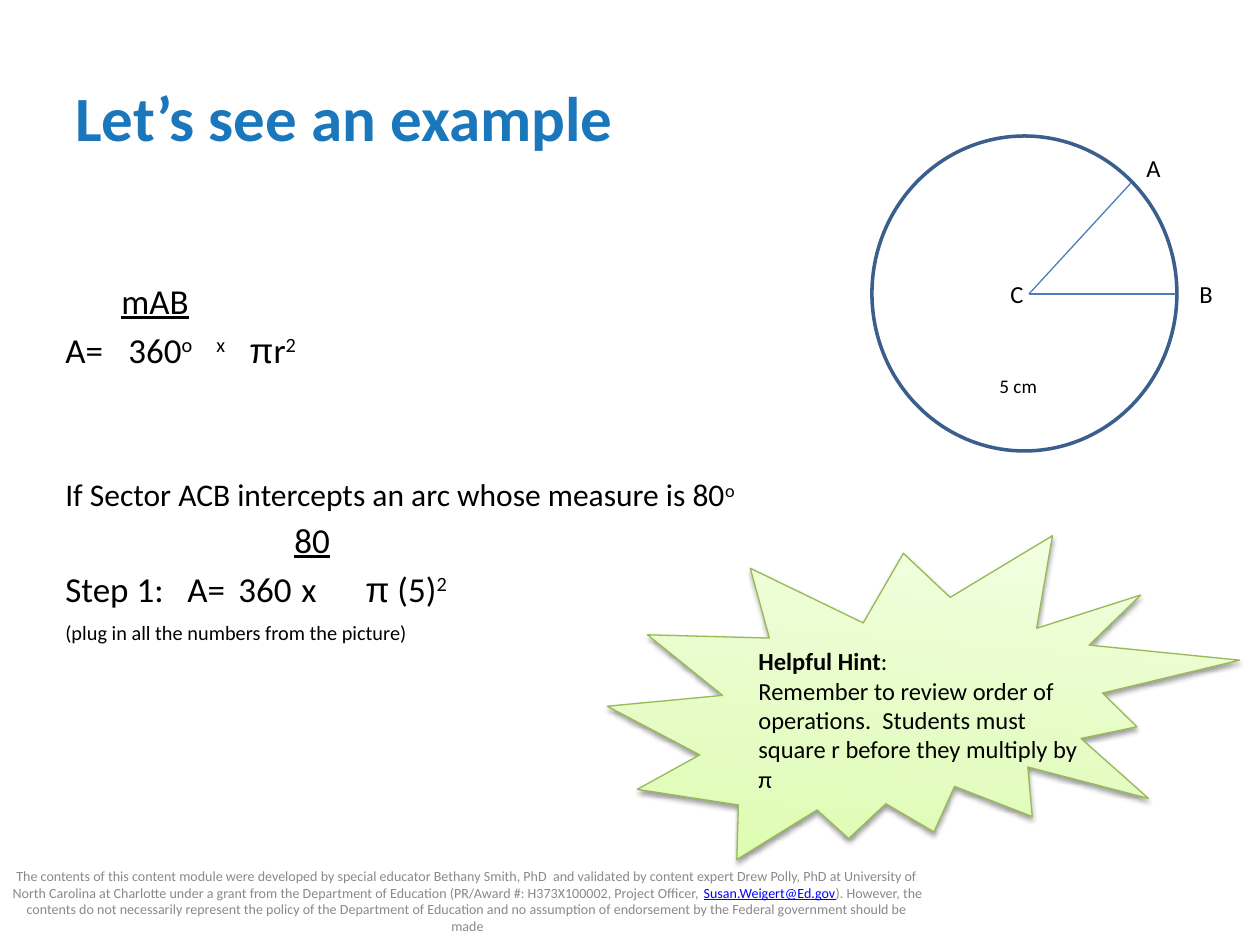
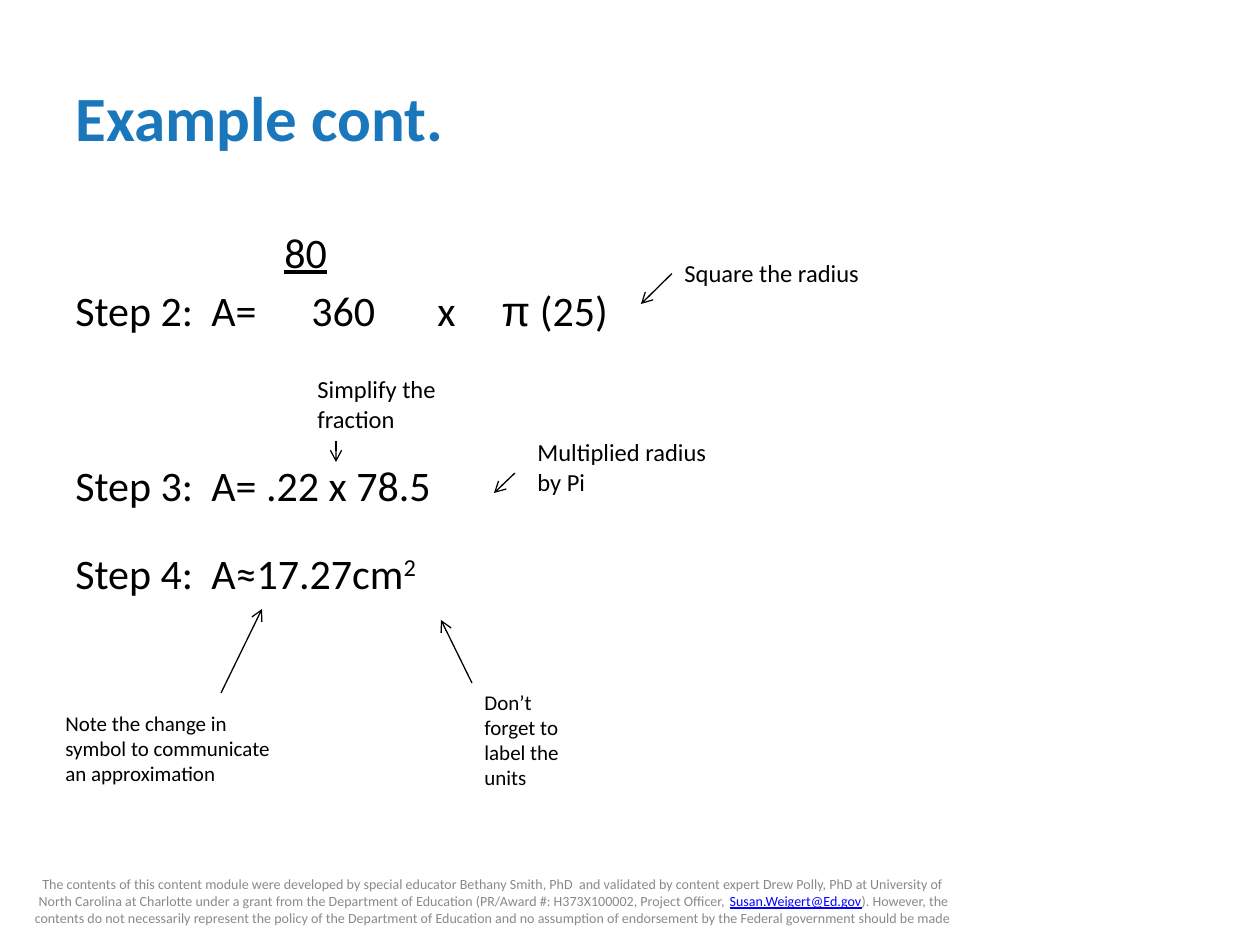
from dataclasses import dataclass

from lxml.etree import SubElement
from pptx import Presentation
from pptx.dml.color import RGBColor
from pptx.enum.shapes import MSO_CONNECTOR, MSO_SHAPE
from pptx.enum.text import MSO_ANCHOR, PP_ALIGN
from pptx.oxml import parse_xml
from pptx.oxml.ns import nsdecls, qn
from pptx.util import Pt

PX = 914400 / 126


@dataclass(frozen=True)
class Theme:
    font: str = "Calibri"
    symbol_font: str = "Arial"
    title: str = "1B77BC"
    text: str = "000000"
    muted: str = "898989"
    link: str = "0000FF"
    paper: str = "FFFFFF"
    circle: str = "3A5F8C"
    radius: str = "4B7EBC"
    seal_line: str = "98B955"
    seal_stops: tuple = ((0, "DAFDA7"), (35, "E4FCC2"), (100, "F5FFE7"))
    title_size: float = 36
    step_size: float = 24
    formula_size: float = 20
    given_size: float = 18
    label_size: float = 14
    note_size: float = 12
    length_size: float = 11
    footer_size: float = 8
    thin: float = 0.75
    thick: float = 2


T = Theme()

FOOTER = [[
    ("The contents of this content module were developed by special educator "
     "Bethany Smith, PhD  and validated by content expert Drew Polly, PhD at "
     "University of North Carolina at Charlotte under a grant from the Department "
     "of Education (PR/Award #: H373X100002, Project Officer, ", ""),
    ("Susan.Weigert@Ed.gov", "link underline"),
    ("). However, the contents do not necessarily represent the policy of the "
     "Department of Education and no assumption of endorsement by the Federal "
     "government should be made", ""),
]]


def px(n):
    return round(n * PX)


def rgb(color):
    return RGBColor.from_string(color)


# Text helpers
def add_runs(p, runs, size, color):
    for text, style in runs:
        r = p.add_run()
        r.text = text
        f = r.font
        f.size = Pt(size)
        f.name = T.symbol_font if "symbol" in style else T.font
        f.color.rgb = rgb(T.link if "link" in style else color)
        if "bold" in style:
            f.bold = True
        if "underline" in style:
            f.underline = True
        if "super" in style:
            r._r.get_or_add_rPr().set("baseline", "30000")


def add_text(slide, box, paragraphs, size, color=T.text,
             anchor=MSO_ANCHOR.TOP, align=PP_ALIGN.LEFT):
    """Add a text box; each paragraph is a list of (text, style) runs."""
    sp = slide.shapes.add_textbox(*map(px, box))
    tf = sp.text_frame
    tf.word_wrap = True
    tf.vertical_anchor = anchor
    for i, runs in enumerate(paragraphs):
        p = tf.add_paragraph() if i else tf.paragraphs[0]
        p.alignment = align
        add_runs(p, runs, size, color)
    return sp


def add_working(slide, box, lines):
    """Add lines of working as (size, space before, tab stops, runs)."""
    tf = add_text(slide, box, [], T.formula_size).text_frame
    for i, (size, before, stops, runs) in enumerate(lines):
        p = tf.add_paragraph() if i else tf.paragraphs[0]
        if stops:
            tabs = SubElement(p._p.get_or_add_pPr(), qn("a:tabLst"))
            for stop in stops:
                SubElement(tabs, qn("a:tab"), pos=str(px(stop)), algn="l")
        if before:
            p.space_before = Pt(before)
        add_runs(p, runs, size, T.text)


# Line helper
def add_line(slide, start, end, color, arrow=False):
    cx = slide.shapes.add_connector(MSO_CONNECTOR.STRAIGHT, *map(px, start + end))
    cx.line.color.rgb = rgb(color)
    cx.line.width = Pt(T.thin)
    if arrow:
        SubElement(cx.line._get_or_add_ln(), qn("a:tailEnd"), type="arrow")
    SubElement(cx._element.spPr, qn("a:effectLst"))
    return cx


# Title and footer shared by both slides
def add_frame(prs, title, footer_box):
    slide = prs.slides.add_slide(prs.slide_layouts[6])
    add_text(slide, (63, 38, 1134, 157), [[(title, "bold")]], T.title_size,
             T.title, MSO_ANCHOR.MIDDLE)
    add_text(slide, footer_box, FOOTER, T.footer_size, T.muted,
             MSO_ANCHOR.MIDDLE, PP_ALIGN.CENTER)
    return slide


# Circle with sector ACB
def add_circle(slide, box):
    x, y, w, h = box
    sp = slide.shapes.add_shape(MSO_SHAPE.OVAL, *map(px, box))
    sp.shadow.inherit = False
    sp.fill.solid()
    sp.fill.fore_color.rgb = rgb(T.paper)
    sp.line.color.rgb = rgb(T.circle)
    sp.line.width = Pt(T.thick)
    center = (x + 157, y + h // 2 + 1)
    for end in ((x + w - 1, center[1]), (x + 259, y + 47)):
        add_line(slide, center, end, T.radius)
    for name, dx, dy in (("A", 262, 11), ("B", 315, 137), ("C", 126, 137)):
        add_text(slide, (x + dx, y + dy, 32, 43), [[(name, "")]], T.label_size)
    add_text(slide, (x + 115, y + 232, 73, 37), [[("5 cm", "")]], T.length_size)


# Starburst with the hint
def add_hint(slide, box):
    x, y, w, h = box
    sp = slide.shapes.add_shape(MSO_SHAPE.EXPLOSION2, *map(px, box))
    sp.rotation = 5
    sp.line.color.rgb = rgb(T.seal_line)
    sp.line.width = Pt(T.thin)
    stops = "".join(f'<a:gs pos="{pos * 1000}"><a:srgbClr val="{color}"/></a:gs>'
                    for pos, color in T.seal_stops)
    spPr = sp._element.spPr
    spPr.find(qn("a:prstGeom")).addnext(parse_xml(
        f'<a:gradFill {nsdecls("a")} rotWithShape="1"><a:gsLst>{stops}</a:gsLst>'
        '<a:lin ang="16200000" scaled="0"/></a:gradFill>'))
    spPr.append(parse_xml(
        f'<a:effectLst {nsdecls("a")}><a:outerShdw blurRad="{Pt(3.1)}" '
        f'dist="{Pt(1.6)}" dir="5400000" rotWithShape="0"><a:srgbClr val="000000">'
        '<a:alpha val="38000"/></a:srgbClr></a:outerShdw></a:effectLst>'))
    add_text(slide, (x + 137, y + 115, 347, 199), [
        [("Helpful Hint", "bold"), (":", "")],
        [("Remember to review order of operations.  Students must square r "
          "before they multiply by π", "")],
    ], T.label_size)


# Label with an arrow that points into the working
def add_callout(slide, box, text, size, start, end, joined=False):
    x, y = box[:2]
    sp = add_text(slide, box, [[(text, "")]], size)
    cx = add_line(slide, (x + start[0], y + start[1]),
                  (x + end[0], y + end[1]), T.text, arrow=True)
    if joined:
        cx.begin_connect(sp, 1)


def build_example(prs):
    slide = add_frame(prs, "Let’s see an example", (0, 876, 935, 50))
    size = T.formula_size
    add_working(slide, (53, 273, 1134, 442), [
        (size, 0, (56,), [("\t", ""), ("mAB", "underline")]),
        (size, 4, (63, 151, 184), [
            ("A=\t360", ""), ("o\tx\t", "super"), ("π", "symbol"),
            ("r", ""), ("2", "super")]),
        (T.given_size, 60, (), [
            ("If Sector ACB intercepts an arc whose measure is 80", ""),
            ("o", "super")]),
        (size, 3, (229,), [("\t", ""), ("80", "underline")]),
        (size, 4, (122, 173, 236, 300), [
            ("Step 1:\tA=\t360\tx\t", ""), ("π", "symbol"), (" (5)", ""),
            ("2", "super")]),
        (size, 4, (), [("(plug in all the numbers from the picture)", "super")]),
    ])
    add_circle(slide, (872, 136, 305, 315))
    add_hint(slide, (609, 525, 626, 350))


def build_continued(prs):
    slide = add_frame(prs, "Example cont.", (21, 876, 945, 50))
    size = T.step_size
    add_working(slide, (63, 220, 1134, 624), [
        (size, 0, (209,), [("\t", ""), ("80", "underline")]),
        (size, 4.5, (136, 236, 362, 426), [
            ("Step 2:\tA=\t360\tx\t", ""), ("π", "symbol"), (" (25)", "")]),
        (size, 71, (136,), [("Step 3:\tA= .22 x 78.5", "")]),
        (size, 21.5, (136,), [("Step 4:\tA≈17.27cm", ""), ("2", "super")]),
    ])
    # Box, text, size, then arrow start and end from the box corner
    add_callout(slide, (672, 252, 220, 43), "Square the radius",
                T.label_size, (0, 21), (-31, 52), joined=True)
    add_callout(slide, (305, 368, 147, 72), "Simplify the fraction",
                T.label_size, (31, 73), (31, 94))
    add_callout(slide, (525, 431, 220, 72), "Multiplied radius by Pi",
                T.label_size, (-10, 42), (-31, 62))
    add_callout(slide, (472, 683, 105, 115), "Don’t forget to label the units",
                T.note_size, (0, 0), (-31, -63))
    add_callout(slide, (53, 704, 242, 115),
                "Note the change in symbol to communicate an approximation",
                T.note_size, (168, -11), (209, -95))


def main():
    prs = Presentation()
    prs.slide_width, prs.slide_height = px(1260), px(945)
    build_example(prs)
    build_continued(prs)
    prs.save("out.pptx")


if __name__ == "__main__":
    main()
